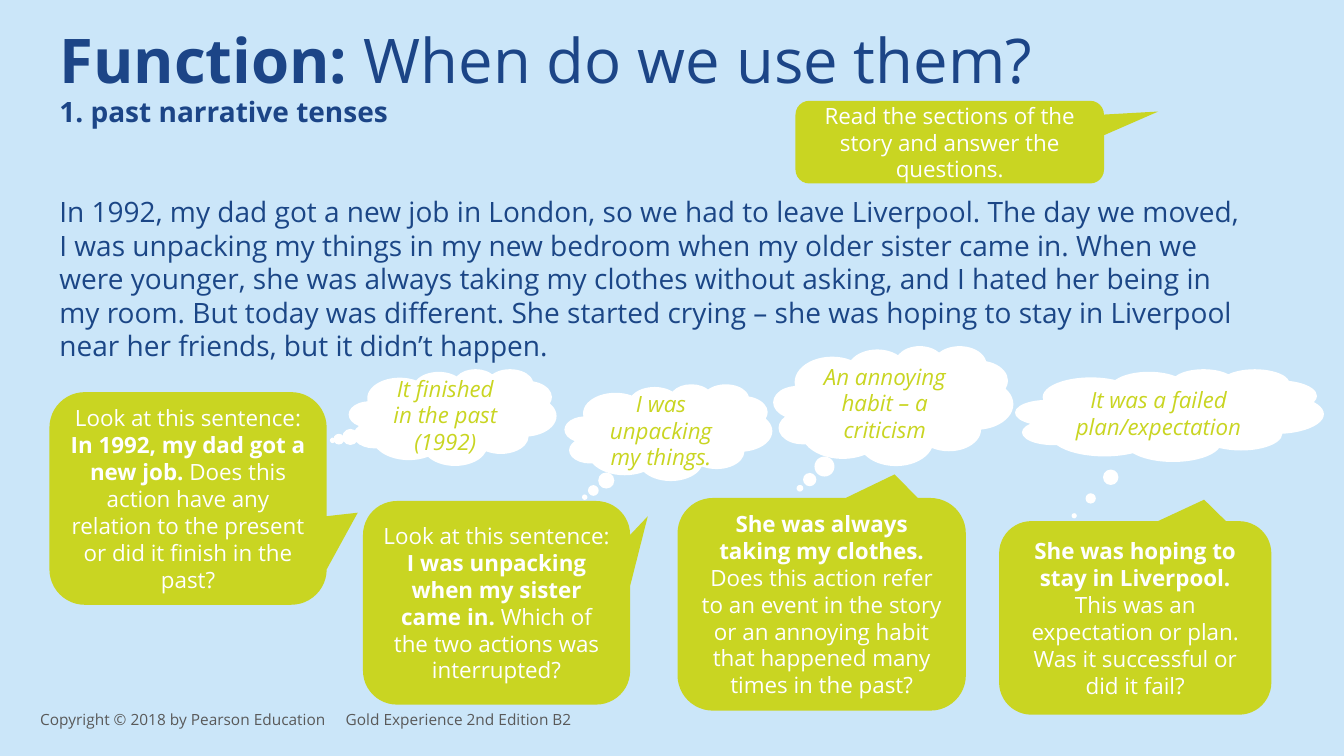
from lxml.etree import SubElement
from pptx import Presentation
from pptx.dml.color import RGBColor
from pptx.enum.shapes import MSO_SHAPE
from pptx.enum.text import MSO_ANCHOR, PP_ALIGN
from pptx.oxml.ns import qn
from pptx.util import Inches, Pt

COLORS = {
    "sky": "CBE6F9",
    "navy": "1C4587",
    "story": "1B4686",
    "lime": "C9D522",
    "white": "FFFFFF",
    "grey": "595959",
}
FONT = "Open Sans"

QUESTIONS = [
    {
        "bubble": (0, 0.46, 2.75, 2.11),
        "bubble_tail": (0.612, 0.067),
        "question": [
            ("Look at this sentence: ", False),
            ("In 1992, my dad got a new job.", True),
            (" Does this action have any relation to the present "
             "or did it finish in the past?", False),
        ],
        "cloud": (2.97, 0.23, 2.06, 0.96),
        "cloud_tail": (-0.578, 0.239),
        "answer": "It finished in the past (1992)",
    },
    {
        "bubble": (3.11, 1.54, 2.65, 2.02),
        "bubble_tail": (0.566, -0.425),
        "question": [
            ("Look at this sentence: ", False),
            ("I was unpacking when my sister came in. ", True),
            ("Which of the two actions was interrupted?", False),
        ],
        "cloud": (5.11, 0.38, 2.06, 0.96),
        "cloud_tail": (-0.403, 0.67),
        "answer": "I was unpacking my things.",
    },
    {
        "bubble": (6.23, 1.51, 2.86, 2.11),
        "bubble_tail": (0.253, -0.611),
        "question": [
            ("She was always taking my clothes.", True),
            (" Does this action refer to an event in the story or an "
             "annoying habit that happened many times in the past?", False),
        ],
        "cloud": (7.18, 0, 2.38, 1.19),
        "cloud_tail": (-0.389, 0.688),
        "answer": "An annoying habit – a criticism",
    },
    {
        "bubble": (9.42, 1.74, 2.7, 1.92),
        "bubble_tail": (0.253, -0.611),
        "question": [
            ("She was hoping to stay in Liverpool.", True),
            (" This was an expectation or plan. "
             "Was it successful or did it fail?", False),
        ],
        "cloud": (9.58, 0.23, 3.06, 0.92),
        "cloud_tail": (-0.309, 1.084),
        "answer": "It was a failed plan/expectation",
    },
]


def color(name):
    return RGBColor.from_string(COLORS[name])


def within(box, part):
    return (box[0] + part[0], box[1] + part[1], part[2], part[3])


def write(frame, pieces, size, ink, italic=False):
    frame.word_wrap = True
    paragraph = frame.paragraphs[0]
    for words, bold in pieces:
        run = paragraph.add_run()
        run.text = words
        run.font.name = FONT
        run.font.size = Pt(size)
        run.font.bold = bold
        run.font.italic = italic
        run.font.color.rgb = color(ink)
    return paragraph


def add_text(slide, box, pieces, size, ink):
    frame = slide.shapes.add_textbox(*map(Inches, box)).text_frame
    return write(frame, pieces, size, ink)


def add_callout(slide, box, preset, tail, fill, pieces, ink, italic=False):
    callout = slide.shapes.add_shape(preset, *map(Inches, box))
    for index, offset in enumerate(tail):
        callout.adjustments[index] = offset
    callout.fill.solid()
    callout.fill.fore_color.rgb = color(fill)
    callout.line.fill.background()
    callout.shadow.inherit = False
    callout.text_frame.vertical_anchor = MSO_ANCHOR.MIDDLE
    paragraph = write(callout.text_frame, pieces, 16, ink, italic)
    paragraph.alignment = PP_ALIGN.CENTER


def add_speech_bubble(slide, box, tail, pieces):
    add_callout(slide, box, MSO_SHAPE.ROUNDED_RECTANGULAR_CALLOUT, tail,
                "lime", pieces, "white")


def add_thought_cloud(slide, box, tail, answer):
    add_callout(slide, box, MSO_SHAPE.CLOUD_CALLOUT, tail,
                "white", [(answer, False)], "lime", italic=True)


def add_header(slide, box):
    title = add_text(slide, within(box, (0, 0, 12.24, 1.44)),
                     [("Function: ", True), ("When do we use them?", False)],
                     44, "navy")
    subtitle = add_text(slide, within(box, (0, 0.68, 10.1, 0.8)),
                        [("1. past narrative tenses", True)], 20, "navy")
    for heading in (title, subtitle):
        heading.line_spacing = 0.9
    add_speech_bubble(
        slide, within(box, (7.4, 0.75, 3.06, 0.82)), (0.676, -0.37),
        [("Read the sections of the story and answer the questions.", False)])


def add_story(slide, box):
    story = (
        "In 1992, my dad got a new job in London, so we had to leave "
        "Liverpool. The day we moved, I was unpacking my things in my new "
        "bedroom when my older sister came in. When we were younger, she was "
        "always taking my clothes without asking, and I hated her being in "
        "my room. But today was different. She started crying – she was "
        "hoping to stay in Liverpool near her friends, but it didn’t happen."
    )
    add_text(slide, box, [(story, False)], 20, "story")


def add_questions(slide, box):
    for item in QUESTIONS:
        add_speech_bubble(slide, within(box, item["bubble"]),
                          item["bubble_tail"], item["question"])
        add_thought_cloud(slide, within(box, item["cloud"]),
                          item["cloud_tail"], item["answer"])


def add_footer(slide, box):
    frame = slide.shapes.add_textbox(*map(Inches, box)).text_frame
    frame.vertical_anchor = MSO_ANCHOR.MIDDLE
    tabs = SubElement(frame.paragraphs[0]._p.get_or_add_pPr(), qn("a:tabLst"))
    SubElement(tabs, qn("a:tab"), pos=str(Inches(3.03)), algn="l")
    write(frame, [("Copyright © 2018 by Pearson Education\t"
                   "Gold Experience 2nd Edition B2", False)], 11, "grey")


def main():
    deck = Presentation()
    deck.slide_width = Inches(13.33)
    deck.slide_height = Inches(7.5)
    slide = deck.slides.add_slide(deck.slide_layouts[6])
    slide.background.fill.solid()
    slide.background.fill.fore_color.rgb = color("sky")
    add_header(slide, (0.49, 0.25, 12.24, 1.57))
    add_footer(slide, (0.3, 6.94, 6.92, 0.4))
    add_story(slide, (0.49, 1.88, 11.95, 1.78))
    add_questions(slide, (0.49, 3.43, 12.64, 3.66))
    deck.save("out.pptx")


if __name__ == "__main__":
    main()
